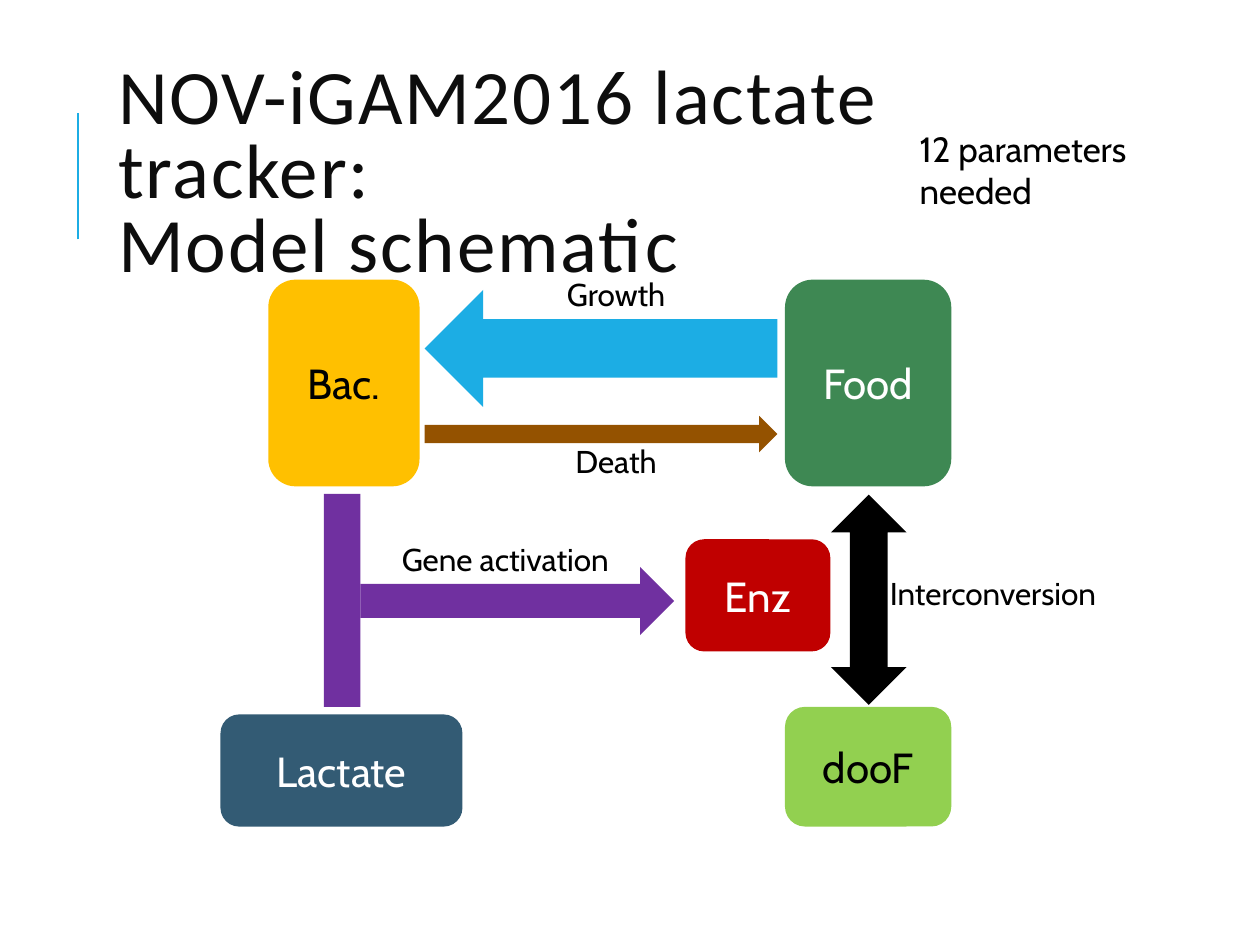
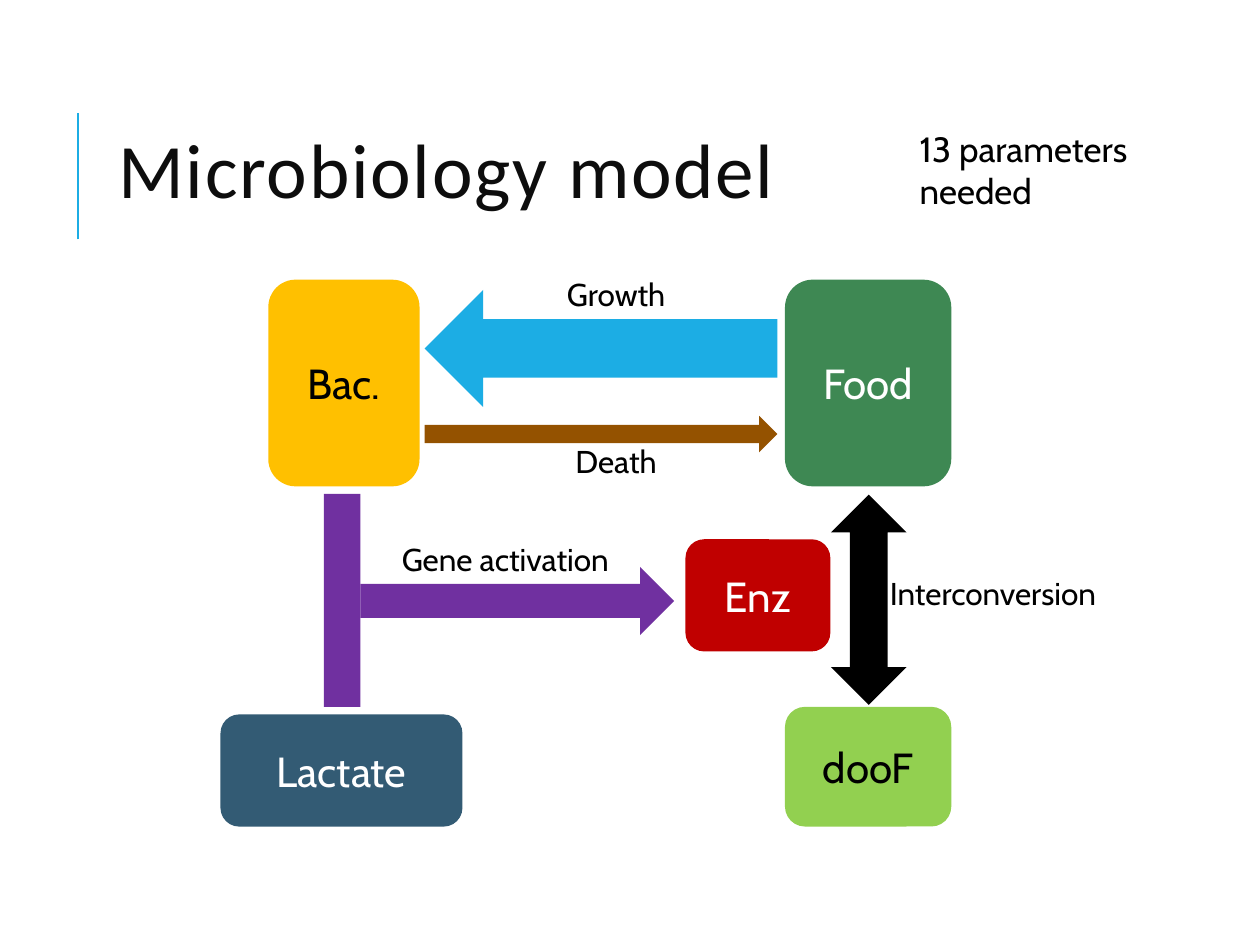
import pptx
import pptx.util
import pptx.dml.color
import pptx.enum.shapes
import pptx.enum.text
import pptx.oxml.ns
import lxml.etree

MSO = pptx.enum.shapes.MSO_SHAPE
ALIGN = pptx.enum.text.PP_ALIGN
ANCHOR = pptx.enum.text.MSO_ANCHOR
FIT = pptx.enum.text.MSO_AUTO_SIZE

WIDTH = pptx.util.Inches(10)
HEIGHT = pptx.util.Inches(7.5)
COL = WIDTH / 100
ROW = HEIGHT / 75
HEADER_BOX = (6.2, 9)
DIAGRAM_BOX = (17.5, 22.2)

COLORS = {
    "accent": "1CADE4", "title": "0D0D0D", "black": "000000", "white": "FFFFFF",
    "bacteria": "FFC000", "food": "3E8853", "death": "945200", "lactate": "335B74",
    "gene": "7030A0", "enzyme": "C00000", "doof": "92D050",
}

SLIDES = [
    ("NOV-iGAM2016 lactate tracker:\vModel schematic", "12 parameters needed"),
    ("Microbiology model", "13 parameters needed"),
]


def color(name):
    return pptx.dml.color.RGBColor.from_string(COLORS[name])


def place(box, col, row, cols, rows):
    left, top = box
    return [round(n) for n in ((left + col) * COL, (top + row) * ROW, cols * COL, rows * ROW)]


def style(tf, size, ink="black", font="Cabin", align=ALIGN.CENTER):
    tf.word_wrap = True
    for p in tf.paragraphs:
        p.alignment = align
        for r in p.runs:
            r.font.size = pptx.util.Pt(size)
            r.font.name = font
            r.font.color.rgb = color(ink)


def add_block(s, kind, at, fill, text="", ink="black", rotation=0):
    sp = s.shapes.add_shape(kind, *at)
    sp.shadow.inherit = False
    sp.fill.solid()
    sp.fill.fore_color.rgb = color(fill)
    sp.line.fill.background()
    sp.rotation = rotation
    if text:
        sp.text_frame.text = text
        sp.text_frame.vertical_anchor = ANCHOR.MIDDLE
        style(sp.text_frame, 24, ink)
    return sp


def add_label(s, at, text, size=18, align=ALIGN.CENTER):
    tf = s.shapes.add_textbox(*at).text_frame
    tf.text = text
    style(tf, size, align=align)
    tf.auto_size = FIT.SHAPE_TO_FIT_TEXT


def add_header(s, box, title, note):
    x, top, _, height = place(box, 0, 0, 0, 10)
    rule = s.shapes.add_connector(
        pptx.enum.shapes.MSO_CONNECTOR.STRAIGHT, x, top + height, x, top)
    rule.line.color.rgb = color("accent")
    rule.line.width = pptx.util.Pt(1.5)
    lxml.etree.SubElement(rule._element.spPr, pptx.oxml.ns.qn("a:effectLst"))

    sp = s.shapes.title
    sp.left, sp.top, sp.width, sp.height = place(box, 2.2, 0.6, 79.7, 8.8)
    tf = sp.text_frame
    tf.text = title
    tf.auto_size = FIT.NONE
    tf.vertical_anchor = ANCHOR.MIDDLE
    style(tf, 44, "title", "Calibri", ALIGN.LEFT)
    for p in tf.paragraphs:
        p.line_spacing = 0.8
        for r in p.runs:
            r.font._element.set("spc", "100")

    add_label(s, place(box, 65.8, 0.6, 26.5, 7.7), note, 20, ALIGN.LEFT)


def add_diagram(s, box):
    nodes = [
        ("Bac.", (3.8, 0, 12, 16.4), "bacteria", "black"),
        ("Food", (44.8, 0, 13.2, 16.4), "food", "white"),
        ("Lactate", (0, 34.5, 19.2, 8.9), "lactate", "white"),
        ("Enz", (36.9, 20.6, 11.5, 8.9), "enzyme", "white"),
        ("dooF", (44.8, 33.9, 13.2, 9.5), "doof", "black"),
    ]
    flows = [
        (MSO.RIGHT_ARROW, (16.2, 0.8, 28, 9.3), "accent", 180),
        (MSO.RIGHT_ARROW, (16.2, 10.8, 28, 2.9), "death", 0),
        (MSO.RECTANGLE, (8.2, 17, 2.9, 16.9), "gene", 0),
        (MSO.RIGHT_ARROW, (11.1, 22.8, 24.9, 5.4), "gene", 0),
        (MSO.LEFT_RIGHT_ARROW, (43.1, 22.4, 16.7, 6), "black", 90),
    ]
    labels = [
        ("Growth", (23.9, -0.9, 15, 4.9)),
        ("Death", (23.9, 12.4, 15, 4.9)),
        ("Gene activation", (10.2, 20.2, 24.8, 4.9)),
        ("Interconversion", (51.4, 22.9, 19.8, 4)),
    ]
    for text, cells, fill, ink in nodes:
        sp = add_block(s, MSO.ROUNDED_RECTANGLE, place(box, *cells), fill, text, ink)
        if text == "Bac.":
            sp.adjustments[0] = 0.18
    for kind, cells, fill, rotation in flows:
        add_block(s, kind, place(box, *cells), fill, rotation=rotation)
    for text, cells in labels:
        add_label(s, place(box, *cells), text)


def add_model_slide(prs, title, note):
    s = prs.slides.add_slide(prs.slide_layouts[5])
    s.background.fill.solid()
    s.background.fill.fore_color.rgb = color("white")
    add_header(s, HEADER_BOX, title, note)
    add_diagram(s, DIAGRAM_BOX)


def main():
    prs = pptx.Presentation()
    prs.slide_width = WIDTH
    prs.slide_height = HEIGHT
    for title, note in SLIDES:
        add_model_slide(prs, title, note)
    prs.save("out.pptx")


if __name__ == "__main__":
    main()
